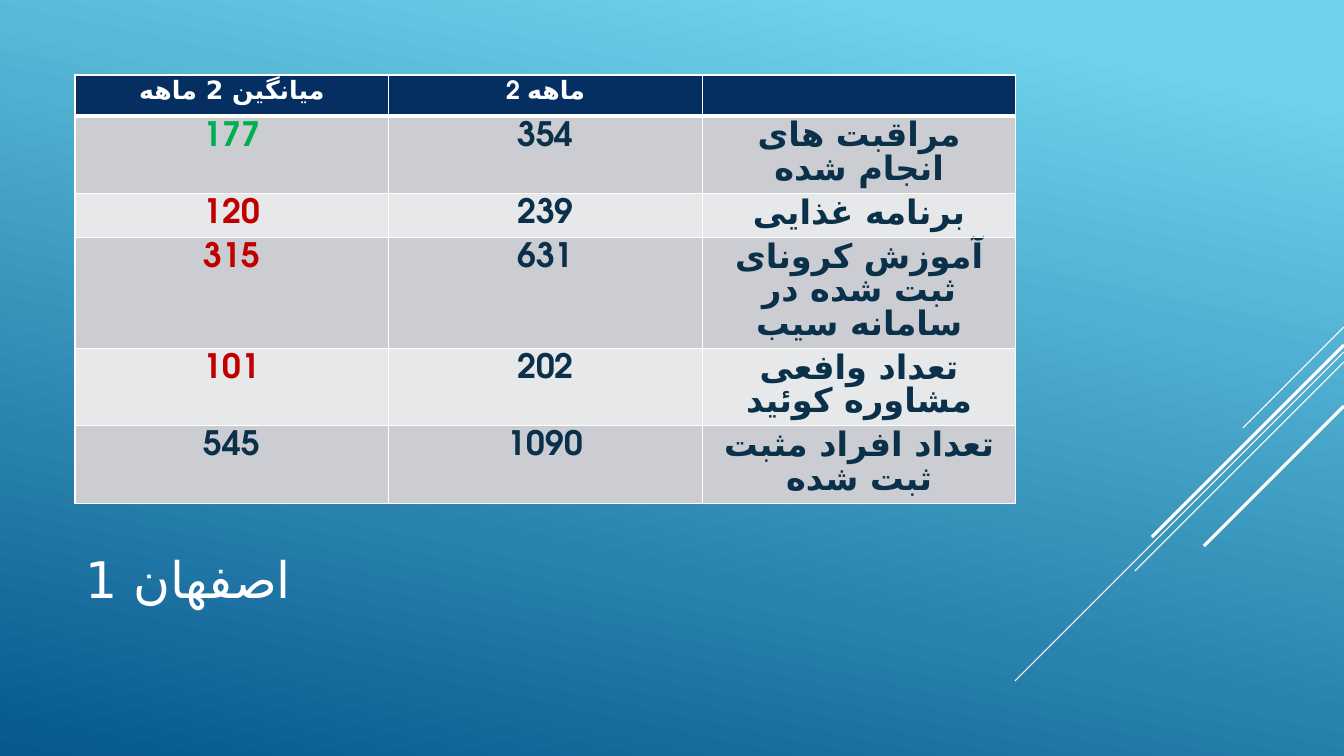
from lxml import etree
from pptx import Presentation, util as u
from pptx.dml.color import RGBColor
from pptx.enum import shapes, text
from pptx.oxml import ns

TITLE = "اصفهان 1"
HEAD = ["میانگین 2 ماهه", "2 ماهه", ""]
ROWS = [  # mean, total, label, colour of the mean, row height
    ("177", "354", "مراقبت های انجام شده", "green", 77),
    ("120", "239", "برنامه غذایی", "red", 44),
    ("315", "631", "آموزش کرونای ثبت شده در سامانه سیب", "red", 111),
    ("101", "202", "تعداد وافعی مشاوره کوئید", "red", 77),
    ("545", "1090", "تعداد افراد مثبت ثبت شده", "ink", 78),
]
RAYS = [(327, 101, 0.75), (352, 329, 0.75), (362, 209, 0.75),
        (345, 192, 2.25), (406, 140, 2.25)]  # top, run, weight
COLORS = {"white": "FFFFFF", "navy": "052F61", "ink": "0A304A",
          "green": "00B050", "red": "C00000", "odd": "CCCDD2",
          "even": "E7E8EA", "sky": "6ED2EB", "deep": "06588E"}
FONT = "TeX Gyre Adventor"
ARABIC = "DejaVu Sans"
WIDE, HIGH = 1344, 756
LEFT, TOP, SPAN, HEAD_H = 75, 75, 941, 41


def px(n):
    return u.Emu(round(n * 914400 / 100.8))


def rgb(name):
    return RGBColor.from_string(COLORS[name])


def style(para, size, color, bold=False):
    for run in para.runs:
        font = run.font
        font.size, font.bold, font.name = u.Pt(size), bold, FONT
        font.color.rgb = rgb(color)
        script = etree.SubElement(font._element, ns.qn("a:cs"))
        script.set("typeface", ARABIC)


def border(cell, bottom):
    """Draw white cell edges, with the given bottom weight in points."""
    props = cell._tc.get_or_add_tcPr()
    for side, weight in (("L", 1), ("R", 1), ("T", 1), ("B", bottom)):
        line = etree.SubElement(props, ns.qn("a:ln" + side), w=str(u.Pt(weight)))
        fill = etree.SubElement(line, ns.qn("a:solidFill"))
        etree.SubElement(fill, ns.qn("a:srgbClr"), val=COLORS["white"])


def write(cell, words, size, color, fill, bottom=1):
    border(cell, bottom)
    cell.fill.solid()
    cell.fill.fore_color.rgb = rgb(fill)
    cell.text_frame.text = words
    para = cell.text_frame.paragraphs[0]
    para.alignment = text.PP_ALIGN.CENTER
    para.line_spacing = u.Pt(size - 1.5 if words.isdigit() else size)
    style(para, size, color, True)


def paint(slide):
    fill = slide.background.fill
    fill.gradient()
    fill.gradient_angle = 258
    for stop, name, place in zip(fill.gradient_stops, ("sky", "deep"), (0.1, 1)):
        stop.color.rgb = rgb(name)
        stop.position = place


def rays(slide):
    for top, run, weight in RAYS:
        ray = slide.shapes.add_connector(
            shapes.MSO_CONNECTOR.STRAIGHT,
            px(WIDE), px(top), px(WIDE - run), px(top + run))
        ray.line.color.rgb = rgb("white")
        ray.line.width = u.Pt(weight)
        etree.SubElement(ray._element.spPr, ns.qn("a:effectLst"))


def title(slide):
    box = slide.shapes.title
    box.left, box.top, box.width, box.height = map(px, (LEFT, 495, SPAN, 166))
    frame = box.text_frame
    frame.text = TITLE
    frame.vertical_anchor = text.MSO_ANCHOR.MIDDLE
    para = frame.paragraphs[0]
    para.alignment = text.PP_ALIGN.LEFT
    style(para, 36, "white")


def table(slide):
    highs = [HEAD_H] + [row[-1] for row in ROWS]
    grid = slide.shapes.add_table(len(highs), len(HEAD), px(LEFT), px(TOP),
                                  px(SPAN), px(sum(highs))).table
    for row, high in zip(grid.rows, highs):
        row.height = px(high)
    for col, words in enumerate(HEAD):
        write(grid.cell(0, col), words, 18, "white", "navy", 3)
    for num, (mean, total, label, hue, _) in enumerate(ROWS, 1):
        fill = "odd" if num % 2 else "even"
        for col, words in enumerate((mean, total, label)):
            color = "ink" if col else hue
            write(grid.cell(num, col), words, 24, color, fill)


def main():
    deck = Presentation()
    deck.slide_width, deck.slide_height = px(WIDE), px(HIGH)
    slide = deck.slides.add_slide(deck.slide_layouts[5])
    paint(slide)
    rays(slide)
    title(slide)
    table(slide)
    deck.save("out.pptx")


if __name__ == "__main__":
    main()
